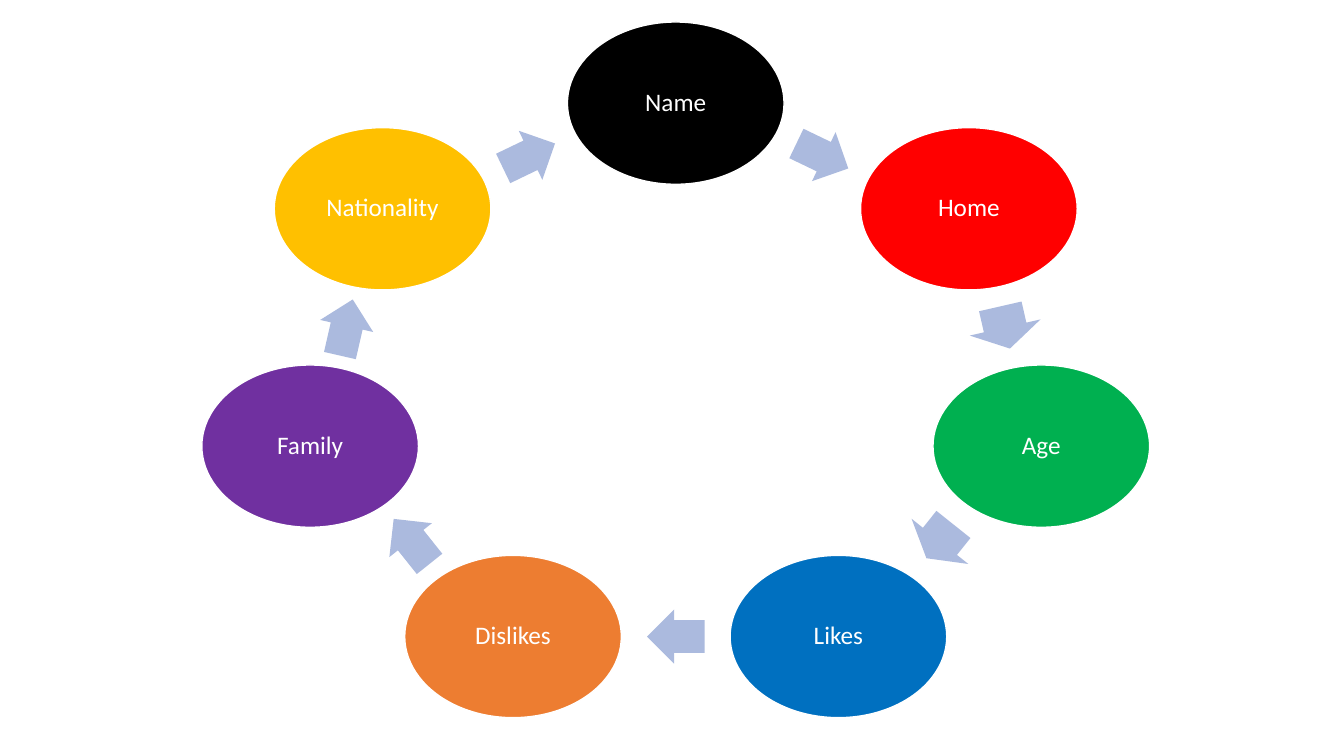
from math import cos, pi, sin
from typing import NamedTuple

from pptx import Presentation
from pptx.dml.color import RGBColor
from pptx.enum.shapes import MSO_SHAPE
from pptx.enum.text import MSO_ANCHOR, PP_ALIGN
from pptx.shapes.autoshape import Shape
from pptx.slide import Slide
from pptx.util import Cm, Pt

COLORS = {
    "black": "000000",
    "red": "FF0000",
    "green": "00B050",
    "blue": "0070C0",
    "orange": "ED7D31",
    "purple": "7030A0",
    "gold": "FFC000",
    "white": "FFFFFF",
    "arrow": "ABBADE",
}


class Size(NamedTuple):
    wide: float
    high: float


class Topic(NamedTuple):
    label: str
    color: str
    arrow: Size  # arrow leading to the next topic


LONG = Size(1.45, 1.37)
SHORT = Size(1.09, 1.83)
OVAL = Size(5.46, 4.09)

TOPICS = [
    Topic("Name", "black", LONG),
    Topic("Home", "red", SHORT),
    Topic("Age", "green", SHORT),
    Topic("Likes", "blue", LONG),
    Topic("Dislikes", "orange", LONG),
    Topic("Family", "purple", LONG),
    Topic("Nationality", "gold", LONG),
]

MID_X, MID_Y = 17.03, 9.67
RAD_X, RAD_Y = 9.45, 7.07
COUNT = len(TOPICS)

FRAME = {
    "margin_left": Cm(0.05),
    "margin_right": Cm(0.05),
    "margin_top": Cm(0.05),
    "margin_bottom": Cm(0.05),
    "vertical_anchor": MSO_ANCHOR.MIDDLE,
    "word_wrap": True,
}
PARA = {"alignment": PP_ALIGN.CENTER, "line_spacing": 0.9}
FONT = {"name": "Calibri", "size": Pt(18)}


def color(name: str) -> RGBColor:
    return RGBColor.from_string(COLORS[name])


def apply(target: object, values: dict) -> None:
    for key, value in values.items():
        setattr(target, key, value)


def add_ring(slide: Slide, kind: MSO_SHAPE, step: float, scale: float,
             size: Size, fill: str) -> Shape:
    """Centre a shape on the ring, a number of steps clockwise from the top."""
    angle = 2 * pi * step / COUNT
    left = MID_X + scale * RAD_X * sin(angle) - size.wide / 2
    top = MID_Y - scale * RAD_Y * cos(angle) - size.high / 2
    shape = slide.shapes.add_shape(
        kind, Cm(left), Cm(top), Cm(size.wide), Cm(size.high))
    shape.shadow.inherit = False
    shape.fill.solid()
    shape.fill.fore_color.rgb = color(fill)
    return shape


def add_topic(slide: Slide, step: int, topic: Topic) -> None:
    oval = add_ring(slide, MSO_SHAPE.OVAL, step, 1, OVAL, topic.color)
    oval.line.color.rgb = color("white")
    oval.line.width = Pt(1)
    frame = oval.text_frame
    apply(frame, FRAME)
    para = frame.paragraphs[0]
    apply(para, PARA)
    run = para.add_run()
    run.text = topic.label
    apply(run.font, FONT)
    run.font.color.rgb = color("white")


def add_arrow(slide: Slide, step: int, size: Size) -> None:
    """Place an arrow midway between two neighbouring topics."""
    half = step + 0.5
    arrow = add_ring(slide, MSO_SHAPE.RIGHT_ARROW, half, cos(pi / COUNT),
                     size, "arrow")
    arrow.line.fill.background()
    arrow.rotation = 360 * half / COUNT
    arrow.adjustments[0] = 0.6
    arrow.adjustments[1] = 0.5


def main() -> None:
    deck = Presentation()
    deck.slide_width, deck.slide_height = Cm(33.87), Cm(19.05)
    slide = deck.slides.add_slide(deck.slide_layouts[6])
    for step, topic in enumerate(TOPICS):
        add_topic(slide, step, topic)
        add_arrow(slide, step, topic.arrow)
    deck.save("out.pptx")


if __name__ == "__main__":
    main()
